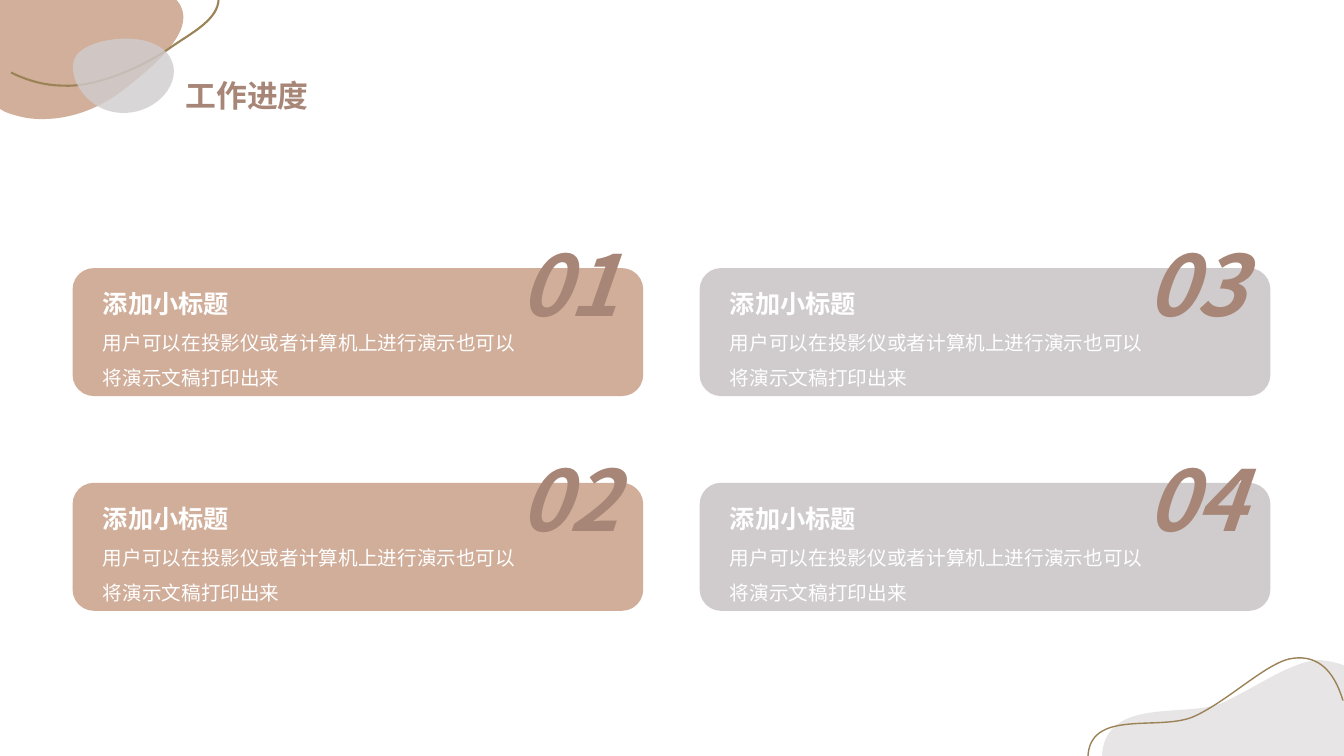
from lxml import etree
from pptx import Presentation
from pptx.dml.color import RGBColor
from pptx.enum.shapes import MSO_SHAPE
from pptx.enum.text import MSO_ANCHOR, MSO_AUTO_SIZE
from pptx.oxml.ns import qn
from pptx.util import Inches, Pt

ROUND = MSO_SHAPE.ROUNDED_RECTANGLE
TOP, MIDDLE = MSO_ANCHOR.TOP, MSO_ANCHOR.MIDDLE
GROW = MSO_AUTO_SIZE.SHAPE_TO_FIT_TEXT

WIDE, HIGH = 13.33, 7.5
FONT = "Noto Sans CJK SC"
COLORS = {"tan": "D1AE9A", "gray": "D0CCCD", "gold": "9B8357",
          "brown": "A78677", "white": "FFFFFF"}
STEPS = 20

HEAD = "添加小标题"
BODY = "用户可以在投影仪或者计算机上进行演示也可以将演示文稿打印出来"

# Outlines: a start point, then line ends (2 numbers) or Bezier curves (6)
TAN_BLOB = [(0.47, 1.18), (0.73, 1.17, 1, 1.07, 1.24, 0.88),
            (1.62, 0.58, 1.96, 0.26, 1.76, 0.01), (1.74, -0.01), (0, -0.01),
            (0, 1.08), (0.05, 1.11), (0.18, 1.16, 0.32, 1.19, 0.47, 1.18)]
TOP_CURVE = [(0.11, 0.72), (0.27, 0.8, 0.45, 0.85, 0.63, 0.85),
             (0.96, 0.87, 1.44, 0.65, 1.68, 0.48),
             (1.93, 0.3, 2.33, 0.13, 2.1, -0.2)]
GRAY_BLOB = [(0.74, 0.58), (0.66, 0.77, 0.87, 1.13, 1.24, 1.12),
             (1.6, 1.11, 1.86, 0.75, 1.65, 0.52),
             (1.43, 0.28, 0.81, 0.39, 0.74, 0.58)]
HILL = [(2.73, 0.05), (2.75, 0.05, 2.76, 0.05, 2.78, 0.05),
        (2.85, 0.06, 2.92, 0.07, 3, 0.1), (3, 1), (0.6, 1),
        (0.63, 0.4, 1.45, 0.63, 1.8, 0.47),
        (2.14, 0.31, 2.47, 0.07, 2.73, 0.05)]
HILL_CURVE = [(0.46, 1.03), (0.46, 0.51, 1.19, 0.77, 1.53, 0.6),
              (1.87, 0.44, 2.26, 0.05, 2.5, 0.03),
              (2.74, 0, 2.9, 0.15, 2.99, 0.45)]


def rgb(name):
    return RGBColor.from_string(COLORS[name])


def extent(outline):
    """Return the left, top, width and height that the curves reach."""
    dots = [outline[0]]
    for part in outline[1:]:
        if len(part) == 2:
            dots.append(part)
            continue
        ends = [dots[-1], part[:2], part[2:4], part[4:]]
        for step in range(1, STEPS + 1):
            t = step / STEPS
            u = 1 - t
            mix = (u ** 3, 3 * u * u * t, 3 * u * t * t, t ** 3)
            dots.append(tuple(sum(m * e[axis] for m, e in zip(mix, ends))
                              for axis in (0, 1)))
    xs, ys = zip(*dots)
    return min(xs), min(ys), max(xs) - min(xs), max(ys) - min(ys)


def draw(slide, outline, left, top, closed):
    """Add a freeform, then swap its straight sides for the true curves."""
    ends = [tuple(map(Inches, part[-2:])) for part in outline]
    pen = slide.shapes.build_freeform(*ends[0])
    pen.add_line_segments(ends[1:], close=closed)
    shape = pen.convert_to_shape()
    shape.shadow.inherit = False
    x, y, width, height = extent(outline)
    place = {"left": left + x, "top": top + y,
             "width": width, "height": height}
    for key, value in place.items():
        setattr(shape, key, Inches(value))
    track = shape._element.spPr.find(".//" + qn("a:path"))
    track.clear()
    track.set("w", str(Inches(width)))
    track.set("h", str(Inches(height)))
    for index, part in enumerate(outline):
        kind = "a:cubicBezTo" if len(part) == 6 else "a:lnTo"
        move = etree.SubElement(track, qn(kind if index else "a:moveTo"))
        for px, py in zip(part[::2], part[1::2]):
            etree.SubElement(move, qn("a:pt"), x=str(Inches(px - x)),
                             y=str(Inches(py - y)))
    if closed:
        etree.SubElement(track, qn("a:close"))
    return shape


def blob(slide, outline, left, top, color, alpha):
    shape = draw(slide, outline, left, top, True)
    shape.fill.solid()
    shape.fill.fore_color.rgb = rgb(color)
    shape.line.fill.background()
    tint = shape._element.spPr.find(".//" + qn("a:srgbClr"))
    etree.SubElement(tint, qn("a:alpha"), val=str(alpha * 1000))


def curve(slide, outline, left, top, width):
    shape = draw(slide, outline, left, top, False)
    shape.fill.background()
    shape.line.color.rgb = rgb("gold")
    shape.line.width = Pt(width)


def text(slide, box, lines, color, space, anchor=MIDDLE):
    """Write lines, each a pair of wording and font values, in the box."""
    frame = slide.shapes.add_textbox(*map(Inches, box)).text_frame
    look = {"word_wrap": True, "auto_size": GROW, "vertical_anchor": anchor,
            "margin_left": 0, "margin_right": 0,
            "margin_top": 0, "margin_bottom": 0}
    for key, value in look.items():
        setattr(frame, key, value)
    for row, (words, style) in enumerate(lines):
        para = frame.add_paragraph() if row else frame.paragraphs[0]
        para.line_spacing = space
        run = para.add_run()
        run.text = words
        run.font.color.rgb = rgb(color)
        for key, value in {"name": FONT, **style}.items():
            setattr(run.font, key, value)
        etree.SubElement(run._r.get_or_add_rPr(), qn("a:ea"), typeface=FONT)


def header(slide, left, top):
    blob(slide, TAN_BLOB, left, top, "tan", 98)
    curve(slide, TOP_CURVE, left, top, 1.5)
    blob(slide, GRAY_BLOB, left, top, "gray", 80)
    text(slide, (left + 1.84, top + 0.69, 2.25, 0.44),
         [("工作进度", {"size": Pt(22), "bold": True})], "brown", 1.2, TOP)


def footer(slide, left, top):
    blob(slide, HILL, left, top, "gray", 50)
    curve(slide, HILL_CURVE, left, top, 1)


def card(slide, box, number, color):
    left, top, width, height = box
    panel = slide.shapes.add_shape(ROUND, *map(Inches, box))
    panel.shadow.inherit = False
    panel.fill.solid()
    panel.fill.fore_color.rgb = rgb(color)
    panel.line.fill.background()
    text(slide, (left + 0.3, top + 0.05, 4.12, height - 0.11),
         [(HEAD, {"size": Pt(18), "bold": True}),
          (BODY, {"size": Pt(14), "bold": False})], "white", 1.5)
    text(slide, (left + width - 1.23, top - 0.77, 1.23, 1.34),
         [(f"{number:02}", {"size": Pt(60), "bold": True, "italic": True})],
         "brown", 1.5)


def cards(slide, left, top):
    for col, color in enumerate(("tan", "gray")):
        for row in range(2):
            box = (left + col * 6.22, top + row * 2.13, 5.66, 1.27)
            card(slide, box, 2 * col + row + 1, color)


def main():
    deck = Presentation()
    deck.slide_width, deck.slide_height = Inches(WIDE), Inches(HIGH)
    slide = deck.slides.add_slide(deck.slide_layouts[6])
    header(slide, 0, 0)
    footer(slide, WIDE - 3, HIGH - 1)
    cards(slide, 0.72, 2.66)
    deck.save("out.pptx")


if __name__ == "__main__":
    main()
